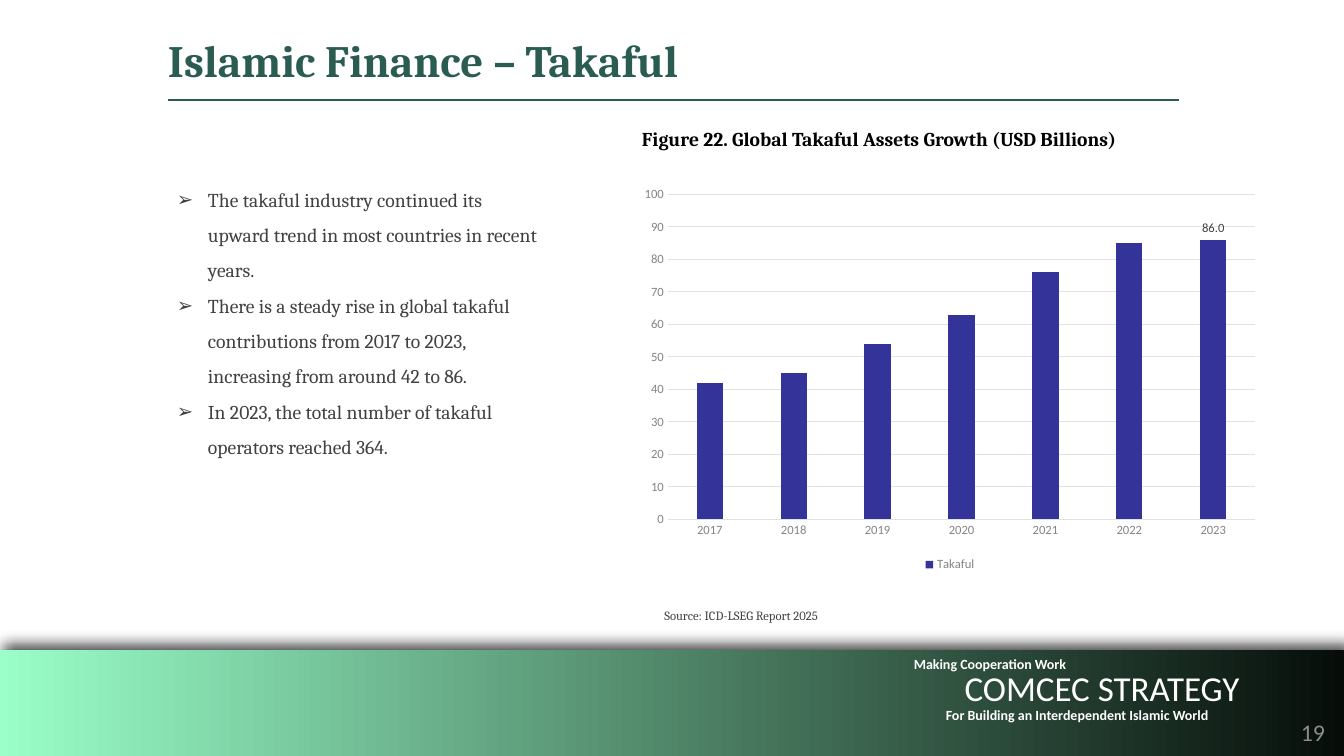
"""Build the takaful slide: title, bullets, column chart and footer band."""
from dataclasses import dataclass

import pptx
import pptx.chart.data
import pptx.dml.color
import pptx.enum.chart
import pptx.enum.shapes
import pptx.enum.text
import pptx.oxml
import pptx.oxml.ns
import pptx.util
from lxml import etree

PX = 914400 / 100.8
ALIGN = pptx.enum.text.PP_ALIGN
ANCHOR = pptx.enum.text.MSO_ANCHOR
AUTO = pptx.enum.text.MSO_AUTO_SIZE
BOX_INSETS = (10, 5, 10, 5)
NO_INSETS = (0, 0, 0, 0)


@dataclass(frozen=True)
class Theme:
    """Fonts, colours and type sizes of the slide."""
    serif: str = "Cambria"
    sans: str = "Calibri"
    green: str = "2A5C51"
    text: str = "414141"
    black: str = "000000"
    white: str = "FFFFFF"
    number: str = "8D8D8D"
    axis: str = "848484"
    grid: str = "E2E2E2"
    bar: str = "333399"
    band_start: str = "9AFFC9"
    band_end: str = "060D09"
    title_size: int = 32
    body_size: int = 14
    source_size: int = 9
    axis_size: int = 9
    chart_size: int = 10
    motto_size: int = 10
    brand_size: int = 25
    number_size: int = 17


THEME = Theme()


def px(n):
    """Turn pixels into EMU."""
    return pptx.util.Emu(round(n * PX))


def rgb(code):
    """Turn a hex code into a colour."""
    return pptx.dml.color.RGBColor.from_string(code)


def style(font, face, size, color, bold=False):
    """Set face, size, colour and weight of a font."""
    font.name, font.size, font.bold = face, pptx.util.Pt(size), bold
    font.color.rgb = rgb(color)


def place(shape, box):
    """Move and size a shape."""
    shape.left, shape.top, shape.width, shape.height = map(px, box)


def frame(tf, insets, anchor=ANCHOR.TOP, wrap=True, grow=False):
    """Set insets, anchor, wrapping and fitting of a text frame."""
    tf.margin_left, tf.margin_top, tf.margin_right, tf.margin_bottom = map(px, insets)
    tf.vertical_anchor, tf.word_wrap = anchor, wrap
    tf.auto_size = AUTO.SHAPE_TO_FIT_TEXT if grow else AUTO.NONE


def write(p, text, face, size, color, bold=False, align=ALIGN.LEFT):
    """Add one styled run to a paragraph."""
    p.alignment = align
    r = p.add_run()
    r.text = text
    style(r.font, face, size, color, bold)


def add_label(s, box, text, face, size, color, bold=False, align=ALIGN.LEFT,
              insets=NO_INSETS, **layout):
    """Add a text box with one line of text."""
    tf = s.shapes.add_textbox(*map(px, box)).text_frame
    frame(tf, insets, **layout)
    write(tf.paragraphs[0], text, face, size, color, bold, align)


def set_title(s, box, text):
    """Fill the title placeholder."""
    place(s.shapes.title, box)
    tf = s.shapes.title.text_frame
    frame(tf, NO_INSETS, grow=True)
    write(tf.paragraphs[0], text, THEME.serif, THEME.title_size, THEME.green, True)


def set_bullets(s, box, items):
    """Fill the body placeholder with an arrow list."""
    body = s.placeholders[1]
    place(body, box)
    tf = body.text_frame
    frame(tf, BOX_INSETS, grow=True)
    for i, item in enumerate(items):
        p = tf.add_paragraph() if i else tf.paragraphs[0]
        pPr = p._p.get_or_add_pPr()
        pPr.set("marL", str(px(31)))
        pPr.set("indent", str(px(-31)))
        etree.SubElement(pPr, pptx.oxml.ns.qn("a:buChar"), char="➢")
        p.line_spacing, p.space_before = 1.5, pptx.util.Pt(0)
        write(p, item, THEME.serif, THEME.body_size, THEME.text)


def add_rule(s, x1, x2, y):
    """Draw the horizontal line under the title."""
    c = s.shapes.add_connector(pptx.enum.shapes.MSO_CONNECTOR.STRAIGHT,
                               px(x1), px(y), px(x2), px(y))
    c.line.color.rgb, c.line.width = rgb(THEME.green), pptx.util.Pt(2)
    etree.SubElement(c._element.spPr, pptx.oxml.ns.qn("a:effectLst"))


def add_band(s, box):
    """Draw the gradient footer band with its shadow."""
    sp = s.shapes.add_shape(pptx.enum.shapes.MSO_SHAPE.RECTANGLE, *map(px, box))
    sp.line.fill.background()
    sp.fill.gradient()
    sp.fill.gradient_angle = 0
    for stop, color in zip(sp.fill.gradient_stops, (THEME.band_start, THEME.band_end)):
        stop.color.rgb = rgb(color)
    sp._element.spPr.append(pptx.oxml.parse_xml(
        f'<a:effectLst {pptx.oxml.ns.nsdecls("a")}>'
        '<a:outerShdw blurRad="127000" dist="76200" dir="19080000" rotWithShape="0">'
        f'<a:srgbClr val="{THEME.black}"><a:alpha val="75000"/></a:srgbClr>'
        '</a:outerShdw></a:effectLst>'))


def add_footer(s):
    """Add the band, the three motto lines and the page number."""
    add_band(s, (-3, 650, 1348, 106))
    add_label(s, (1126, 714, 206, 42), "19", THEME.sans, THEME.number_size,
              THEME.number, align=ALIGN.RIGHT, insets=(7, 4, 7, 4))
    for box, text, size, bold, anchor in (
            ((442, 706, 1270, 101), "For Building an Interdependent Islamic World",
             THEME.motto_size, True, ANCHOR.TOP),
            ((477, 661, 1250, 48), "COMCEC STRATEGY",
             THEME.brand_size, False, ANCHOR.BOTTOM),
            ((586, 655, 808, 36), "Making Cooperation Work",
             THEME.motto_size, True, ANCHOR.TOP)):
        add_label(s, box, text, THEME.sans, size, THEME.white, bold,
                  ALIGN.CENTER, anchor=anchor)


def add_columns(s, box, name, values):
    """Add the column chart, labelling only its last column."""
    data = pptx.chart.data.CategoryChartData(number_format="0.0")
    data.categories = list(values)
    data.add_series(name, values.values())
    kinds = pptx.enum.chart
    chart = s.shapes.add_chart(kinds.XL_CHART_TYPE.COLUMN_CLUSTERED,
                               *map(px, box), data).chart
    style(chart.font, THEME.sans, THEME.chart_size, THEME.text)
    chart.has_title, chart.has_legend = False, True
    chart.legend.position = kinds.XL_LEGEND_POSITION.BOTTOM
    chart.legend.include_in_layout = False
    style(chart.legend.font, THEME.sans, THEME.axis_size, THEME.axis)
    for axis in (chart.category_axis, chart.value_axis):
        axis.major_tick_mark = axis.minor_tick_mark = kinds.XL_TICK_MARK.NONE
        style(axis.tick_labels.font, THEME.sans, THEME.axis_size, THEME.axis)
    val = chart.value_axis
    val.minimum_scale, val.maximum_scale, val.major_unit = 0, 100, 10
    val.tick_labels.number_format = "0"
    val.tick_labels.number_format_is_linked = False
    val.format.line.fill.background()
    for line in (chart.category_axis.format.line, val.major_gridlines.format.line):
        line.color.rgb, line.width = rgb(THEME.grid), pptx.util.Pt(0.75)
    plot = chart.plots[0]
    plot.gap_width, plot.overlap, plot.vary_by_categories = 219, -27, False
    series = plot.series[0]
    series.format.fill.solid()
    series.format.fill.fore_color.rgb = rgb(THEME.bar)
    series.data_labels.show_value = False
    label = series.points[len(values) - 1].data_label
    label.position = kinds.XL_LABEL_POSITION.OUTSIDE_END
    style(label.font, THEME.sans, THEME.axis_size, THEME.text)


def main():
    """Build and save the slide."""
    prs = pptx.Presentation()
    prs.slide_width, prs.slide_height = px(1344), px(756)
    s = prs.slides.add_slide(prs.slide_layouts[1])
    add_footer(s)
    add_rule(s, 168, 1179, 100)
    set_title(s, (168, 33, 957, 54), "Islamic Finance – Takaful")
    set_bullets(s, (167, 171, 389, 290), (
        "The takaful industry continued its upward trend in most countries in recent years.",
        "There is a steady rise in global takaful contributions from 2017 to 2023, "
        "increasing from around 42 to 86.",
        "In 2023, the total number of takaful operators reached 364."))
    add_label(s, (632, 122, 603, 34), "Figure 22. Global Takaful Assets Growth (USD Billions)",
              THEME.serif, THEME.body_size, THEME.black, True, insets=BOX_INSETS, grow=True)
    add_columns(s, (632, 179, 636, 397), "Takaful", {
        "2017": 42, "2018": 45, "2019": 54, "2020": 63, "2021": 76, "2022": 85, "2023": 86})
    add_label(s, (648, 603, 186, 25), "Source: ICD-LSEG Report 2025", THEME.serif,
              THEME.source_size, THEME.text, align=ALIGN.CENTER, insets=BOX_INSETS,
              wrap=False, grow=True)
    prs.save("out.pptx")


if __name__ == "__main__":
    main()
